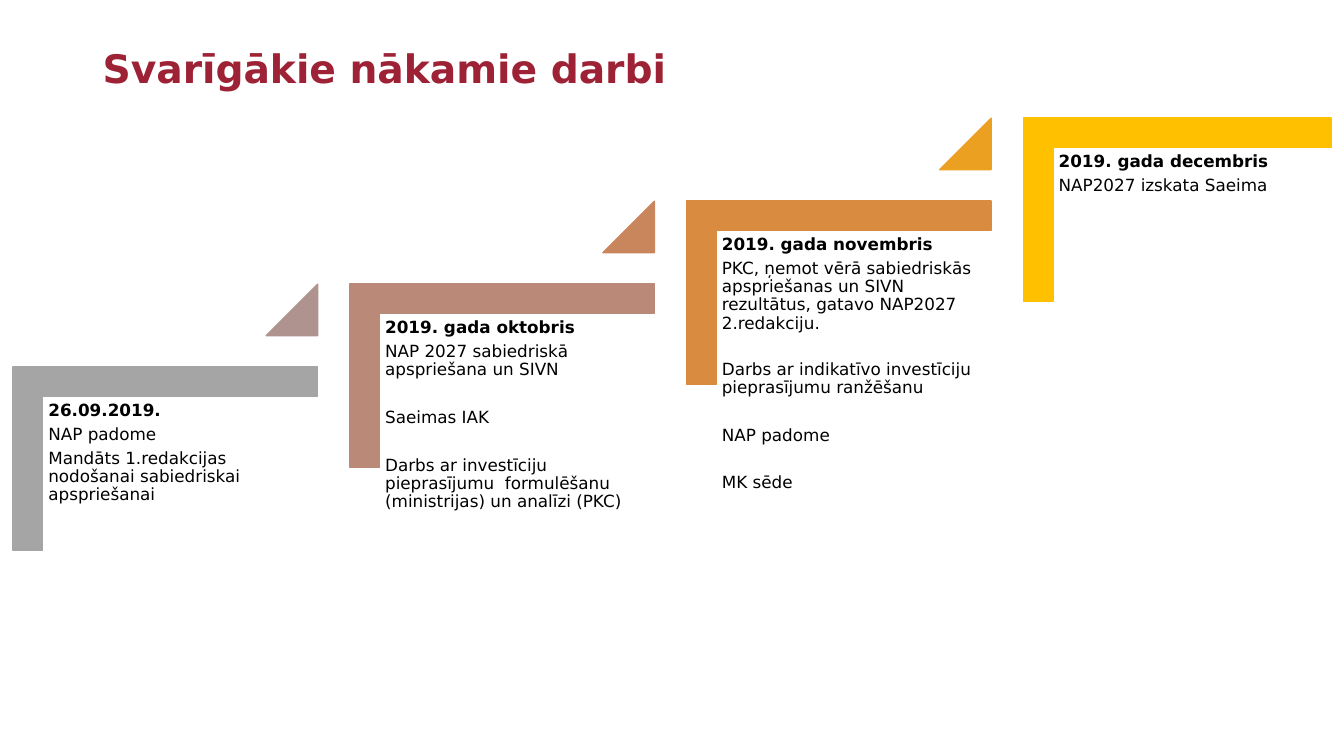
from pptx import Presentation
from pptx import util as u
from pptx.dml.color import RGBColor
from pptx.enum import shapes, text

FONT = "DejaVu Sans"
LEFT, TOP = 0.13, 3.64          # upper left corner of the first step
PITCH, RISE = 3.34, 2.47 / 3    # offset from one step to the next
BRACKET_HEIGHT = 1.82
TRIANGLE = 0.51

# Per step: bracket colour, triangle colour, bracket width, heading,
# and lines as (text, space before in points)
STEPS = [
    ("A5A5A5", "AF938F", 3.02, "26.09.2019.", [
        ("NAP padome", 0),
        ("Mandāts 1.redakcijas nodošanai sabiedriskai apspriešanai", 0)]),
    ("BB8977", "C9865C", 3.02, "2019. gada oktobris", [
        ("NAP 2027 sabiedriskā apspriešana un SIVN", 0),
        ("Saeimas IAK", 17),
        ("Darbs ar investīciju pieprasījumu  formulēšanu (ministrijas) un analīzi (PKC)", 17)]),
    ("D98C3F", "EBA021", 3.02, "2019. gada novembris", [
        ("PKC, ņemot vērā sabiedriskās apspriešanas un SIVN rezultātus, "
         "gatavo NAP2027 2.redakciju.", 0),
        ("Darbs ar indikatīvo investīciju pieprasījumu ranžēšanu", 15.7),
        ("NAP padome", 17),
        ("MK sēde", 17)]),
    ("FFC000", None, 3.05, "2019. gada decembris", [
        ("NAP2027 izskata Saeima", 0)]),
]


def rgb(value):
    return RGBColor.from_string(value)


class Deck:
    def __init__(self):
        self.prs = Presentation()
        self.prs.slide_width, self.prs.slide_height = u.Inches(13.33), u.Inches(7.5)
        self.s = self.prs.slides.add_slide(self.prs.slide_layouts[6])

    def shape(self, kind, box, color, adjustments, rotation=0):
        sp = self.s.shapes.add_shape(kind, *map(u.Inches, box))
        for i, value in enumerate(adjustments):
            sp.adjustments[i] = value
        sp.rotation = rotation
        sp.shadow.inherit = False
        sp.fill.solid()
        sp.fill.fore_color.rgb = rgb(color)
        sp.line.color.rgb = rgb(color)
        sp.line.width = u.Pt(1)

    def bracket(self, x, y, width, color):
        """Draw an L shape turned so that its arms run along the top and left."""
        shift = (width - BRACKET_HEIGHT) / 2
        self.shape(shapes.MSO_SHAPE.CORNER,
                   (x + shift, y - shift, BRACKET_HEIGHT, width),
                   color, (0.161, 0.161), 90)

    def triangle(self, x, y, color):
        self.shape(shapes.MSO_SHAPE.ISOSCELES_TRIANGLE,
                   (x, y, TRIANGLE, TRIANGLE), color, (1,))

    def textbox(self, box, lines, size, color="000000", inset=0.05,
                anchor=text.MSO_ANCHOR.TOP, after=4.2):
        """Write lines of (text, space before), the first one in bold."""
        tf = self.s.shapes.add_textbox(*map(u.Inches, box)).text_frame
        tf.word_wrap = True
        tf.vertical_anchor = anchor
        tf.margin_left = tf.margin_right = u.Inches(inset)
        tf.margin_top = tf.margin_bottom = u.Inches(0.05)
        for i, (words, before) in enumerate(lines):
            p = tf.add_paragraph() if i else tf.paragraphs[0]
            p.text = words
            p.line_spacing = 0.9
            p.space_before, p.space_after = u.Pt(before), u.Pt(after)
            p.font.name, p.font.size = FONT, u.Pt(size)
            p.font.bold = i == 0
            p.font.color.rgb = rgb(color)


def main():
    deck = Deck()
    deck.textbox((0.92, 0.24, 11.5, 0.92), [("Svarīgākie nākamie darbi", 0)], 28,
                 "9D2235", 0.1, text.MSO_ANCHOR.MIDDLE, 0)
    for i, (color, next_color, width, heading, lines) in enumerate(STEPS):
        x, y = LEFT + i * PITCH, TOP - i * RISE
        deck.bracket(x, y, width, color)
        deck.textbox((x + 0.3, y + 0.3, 2.73, 2.39), [(heading, 0)] + lines, 12)
        if next_color:
            deck.triangle(x + 2.51, y - 0.82, next_color)
    deck.prs.save("out.pptx")


if __name__ == "__main__":
    main()
